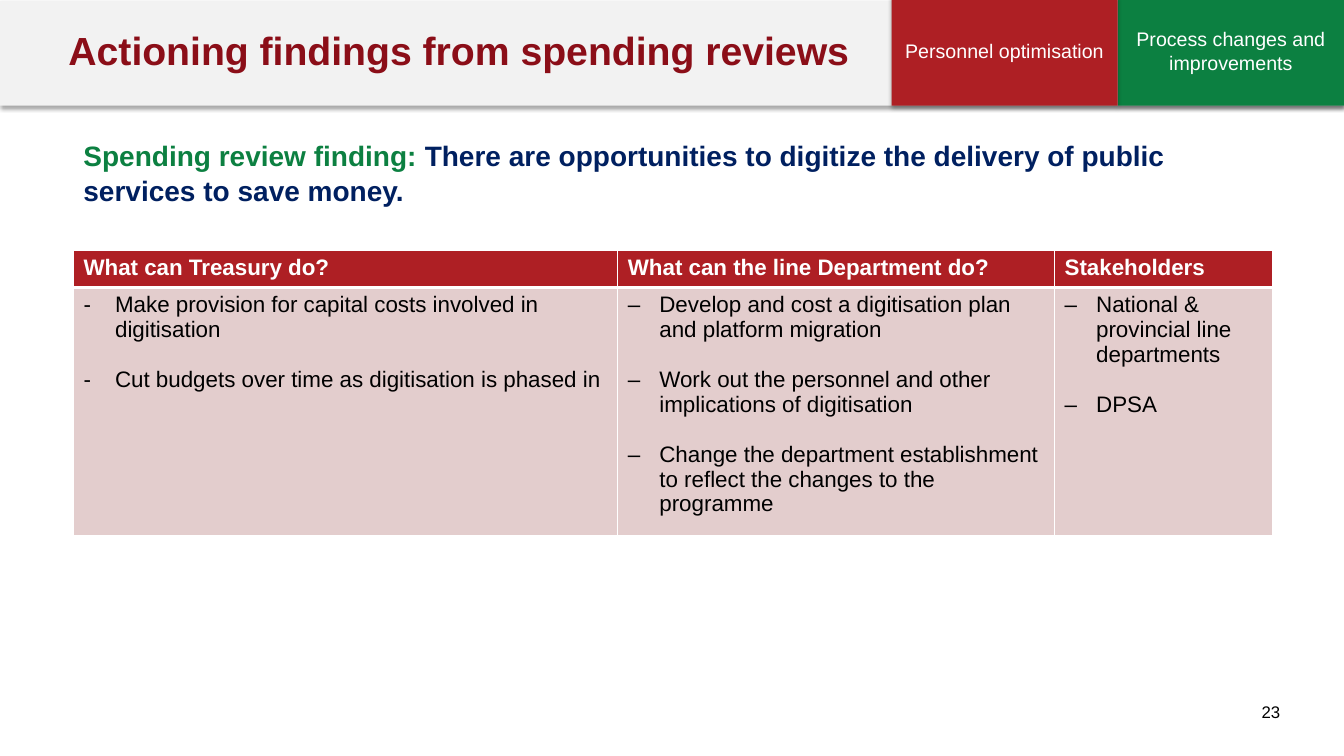
from lxml import etree
from pptx import Presentation
from pptx.dml.color import RGBColor
from pptx.enum.shapes import MSO_SHAPE
from pptx.enum.text import MSO_ANCHOR, PP_ALIGN
from pptx.oxml import parse_xml
from pptx.oxml.ns import nsdecls, qn
from pptx.util import Pt

WHITE = RGBColor(0xFF, 0xFF, 0xFF)
BLACK = RGBColor(0, 0, 0)
GREY = RGBColor(0xF2, 0xF2, 0xF2)
RED = RGBColor(0xAE, 0x1F, 0x24)
DARK_RED = RGBColor(0x8B, 0x0E, 0x18)
PINK = RGBColor(0xE3, 0xCD, 0xCD)
GREEN = RGBColor(0x0C, 0x80, 0x41)
NAVY = RGBColor(0x00, 0x20, 0x60)

SHADOW = f"""<a:effectLst {nsdecls('a')}>
<a:outerShdw blurRad="{Pt(3.1)}" dist="{Pt(1.8)}" dir="5400000" rotWithShape="0">
<a:srgbClr val="000000"><a:alpha val="35000"/></a:srgbClr></a:outerShdw></a:effectLst>"""

COLUMNS = [
    ("What can Treasury do?", 388.8, "-", [
        "Make provision for capital costs involved in digitisation",
        "Cut budgets over time as digitisation is phased in"]),
    ("What can the line Department do?", 312, "–", [
        "Develop and cost a digitisation plan and platform migration",
        "Work out the personnel and other implications of digitisation",
        "Change the department establishment to reflect the changes to the programme"]),
    ("Stakeholders", 155.8, "–", [
        "National & provincial line departments",
        "DPSA"]),
]


def add_text(p, text, size=16, color=BLACK, bold=False, align=PP_ALIGN.LEFT):
    p.alignment = align
    r = p.add_run()
    r.text = text
    r.font.name = "Arial"
    r.font.size = Pt(size)
    r.font.bold = bold
    r.font.color.rgb = color


def set_bullet(p, char, indent=22.5):
    pPr = p._p.get_or_add_pPr()
    pPr.set("marL", str(Pt(indent)))
    pPr.set("indent", str(-Pt(indent)))
    etree.SubElement(pPr, qn("a:buFont")).set("typeface", "Arial")
    etree.SubElement(pPr, qn("a:buChar")).set("char", char)


def set_borders(cell, bottom):
    tcPr = cell._tc.get_or_add_tcPr()
    widths = {"lnL": 1, "lnR": 1, "lnT": 1, "lnB": bottom}
    for i, (tag, width) in enumerate(widths.items()):
        tcPr.insert(i, parse_xml(
            f'<a:{tag} {nsdecls("a")} w="{Pt(width)}"><a:solidFill>'
            f'<a:srgbClr val="{WHITE}"/></a:solidFill></a:{tag}>'))


class SlideBuilder:
    def __init__(self, slide):
        self.slide = slide

    def text_box(self, x, y, w, h, runs, anchor=MSO_ANCHOR.TOP, spacing=1.0, **style):
        """Add one paragraph made of (text, colour) runs."""
        tf = self.slide.shapes.add_textbox(Pt(x), Pt(y), Pt(w), Pt(h)).text_frame
        tf.word_wrap = True
        tf.vertical_anchor = anchor
        p = tf.paragraphs[0]
        p.line_spacing = spacing
        for text, color in runs:
            add_text(p, text, color=color, **style)

    def panel(self, x, y, w, h, fill, label=None):
        """Add a shadowed rectangle with an optional centred label."""
        sp = self.slide.shapes.add_shape(MSO_SHAPE.RECTANGLE, Pt(x), Pt(y), Pt(w), Pt(h))
        sp.fill.solid()
        sp.fill.fore_color.rgb = fill
        sp.line.fill.background()
        sp._element.spPr.append(parse_xml(SHADOW))
        if label:
            tf = sp.text_frame
            tf.word_wrap = True
            tf.vertical_anchor = MSO_ANCHOR.MIDDLE
            add_text(tf.paragraphs[0], label, 14, WHITE, align=PP_ALIGN.CENTER)

    def table(self, x, y, columns, row_heights):
        width = sum(column[1] for column in columns)
        table = self.slide.shapes.add_table(
            len(row_heights), len(columns), Pt(x), Pt(y), Pt(width), Pt(sum(row_heights))).table
        for row, height in zip(table.rows, row_heights):
            row.height = Pt(height)
        for i, (heading, col_width, bullet, items) in enumerate(columns):
            table.columns[i].width = Pt(col_width)
            head = self.cell(table.cell(0, i), RED, bottom=3)
            add_text(head.paragraphs[0], heading, color=WHITE, bold=True)
            body = self.cell(table.cell(1, i), PINK, bottom=1)
            for n, item in enumerate(items):
                p = body.add_paragraph() if n else body.paragraphs[0]
                p.space_before = Pt(17.8 if n else 0)
                add_text(p, item)
                set_bullet(p, bullet)

    def cell(self, cell, fill, bottom):
        """Fill and border a cell, and return its text frame."""
        cell.fill.solid()
        cell.fill.fore_color.rgb = fill
        set_borders(cell, bottom)
        return cell.text_frame


def main():
    prs = Presentation()
    prs.slide_width, prs.slide_height = Pt(960), Pt(540)
    s = SlideBuilder(prs.slides.add_slide(prs.slide_layouts[6]))

    s.text_box(52.5, 94.3, 828.7, 75, [
        ("Spending review finding: ", GREEN),
        ("There are opportunities to digitize the delivery of public services to save money.", NAVY),
    ], size=20, bold=True, spacing=1.05)
    s.text_box(866.9, 497.5, 54.7, 28, [("23", BLACK)], size=12, align=PP_ALIGN.RIGHT)
    s.table(52.5, 179, COLUMNS, [24.5, 167])

    s.panel(0, 0.5, 960, 75, GREY)
    s.panel(798.5, -3, 161.5, 78.5, GREEN, "Process changes and improvements")
    s.text_box(41.8, 19.4, 595.4, 32.4, [("Actioning findings from spending reviews", DARK_RED)],
               MSO_ANCHOR.MIDDLE, size=28, bold=True)
    s.panel(636.8, -3, 161.5, 78.5, RED, "Personnel optimisation")

    prs.save("out.pptx")


if __name__ == "__main__":
    main()
